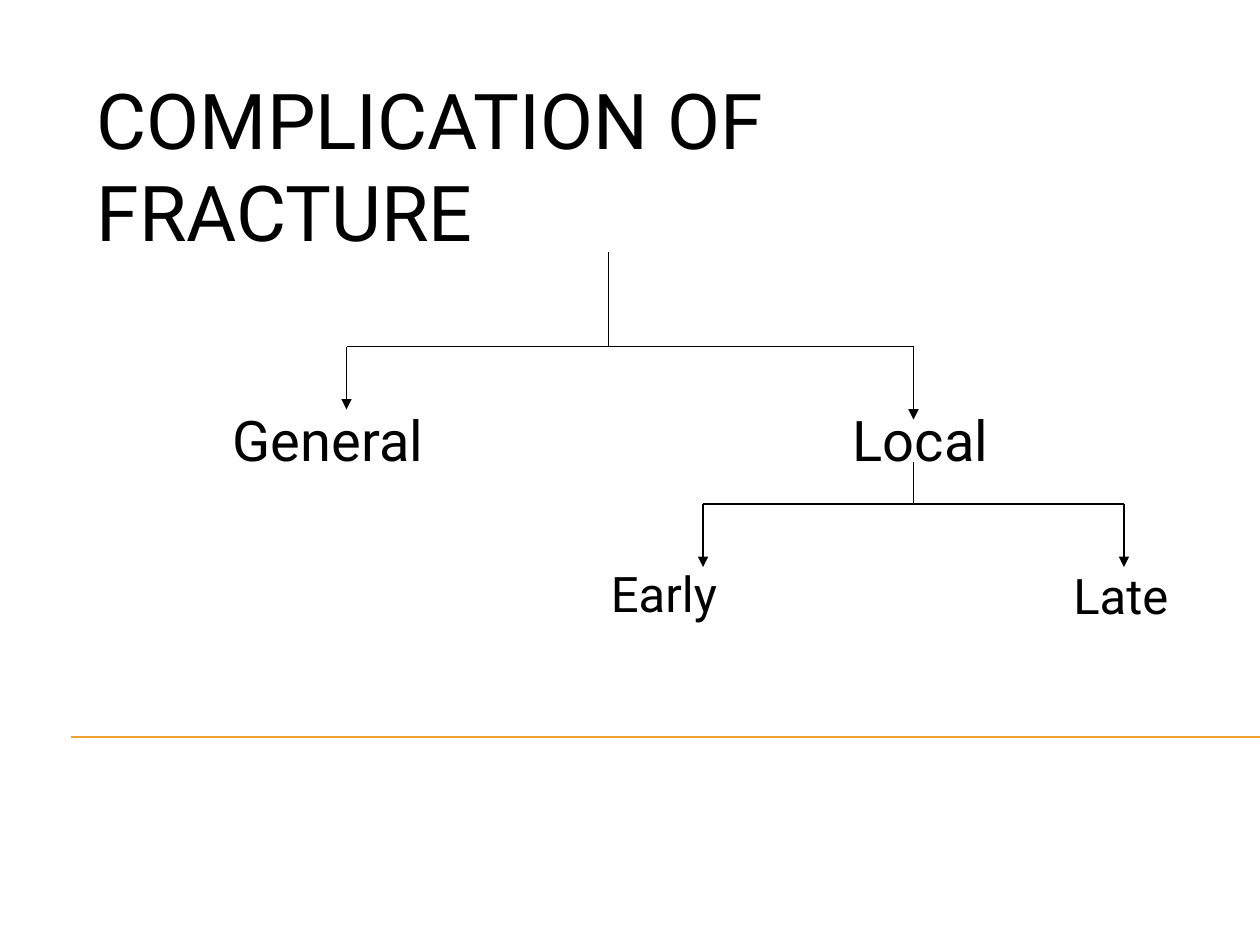
from lxml import etree
from pptx import Presentation
from pptx import util as u
from pptx.dml.color import RGBColor
from pptx.enum import shapes, text
from pptx.oxml import ns

COLORS = {"ink": "000000", "rule": "F0A22E", "paper": "FFFFFF"}
FONT = "Roboto"


def add_text(page, words, box, size, anchor=text.MSO_ANCHOR.TOP, color="ink"):
    label = page.shapes.add_textbox(*map(u.Inches, box))
    frame = label.text_frame
    frame.word_wrap = True
    frame.vertical_anchor = anchor
    span = frame.paragraphs[0].add_run()
    span.text = words
    span.font.name = FONT
    span.font.size = u.Pt(size)
    span.font.color.rgb = RGBColor.from_string(COLORS[color])


def add_line(page, start, end, color="ink", arrow=False):
    line = page.shapes.add_connector(
        shapes.MSO_CONNECTOR.STRAIGHT, *map(u.Inches, (*start, *end)))
    line.line.color.rgb = RGBColor.from_string(COLORS[color])
    line.line.width = u.Pt(0.75)
    if arrow:
        outline = line.line._get_or_add_ln()
        etree.SubElement(outline, ns.qn("a:tailEnd"), type="triangle")
    etree.SubElement(line._element.spPr, ns.qn("a:effectLst"))


def add_title(page, box):
    add_text(page, "COMPLICATION OF FRACTURE", box, 44,
             anchor=text.MSO_ANCHOR.MIDDLE)


def add_fork(page, box, stem_x, stem, drops):
    """Draw a stem, a crossbar as wide as the box and an arrow at each end.

    stem_x is measured from the left of the box, drops are the arrow lengths.
    """
    left, top, width = box
    bar = top + stem
    add_line(page, (left + stem_x, top), (left + stem_x, bar))
    add_line(page, (left, bar), (left + width, bar))
    for x, drop in zip((left, left + width), drops):
        add_line(page, (x, bar), (x, bar + drop), arrow=True)


def add_tree(page, box):
    left, top = box
    add_fork(page, (left, top, 4.5), stem_x=2.08, stem=0.75, drops=(0.5, 0.58))
    add_fork(page, (left + 2.83, top + 1.67, 3.34), stem_x=1.67, stem=0.33,
             drops=(0.5, 0.5))
    labels = [
        ("General", -1, 1.17, 2.2, 0.63, 32),
        ("Local", 3.92, 1.17, 2.2, 0.63, 32),
        ("Early", 2, 2.42, 1.75, 0.57, 28),
        ("Late", 5.67, 2.44, 1.11, 0.57, 28),
    ]
    for words, x, y, width, height, size in labels:
        add_text(page, words, (left + x, top + y, width, height), size)


def main():
    deck = Presentation()
    deck.slide_width, deck.slide_height = u.Inches(10), u.Inches(7.5)
    page = deck.slides.add_slide(deck.slide_layouts[6])
    page.background.fill.solid()
    page.background.fill.fore_color.rgb = RGBColor.from_string(COLORS["paper"])
    add_line(page, (0.56, 5.85), (10, 5.85), color="rule")
    add_title(page, (0.67, 0.5, 8.5, 1.61))
    add_tree(page, (2.75, 2))
    deck.save("out.pptx")


if __name__ == "__main__":
    main()
